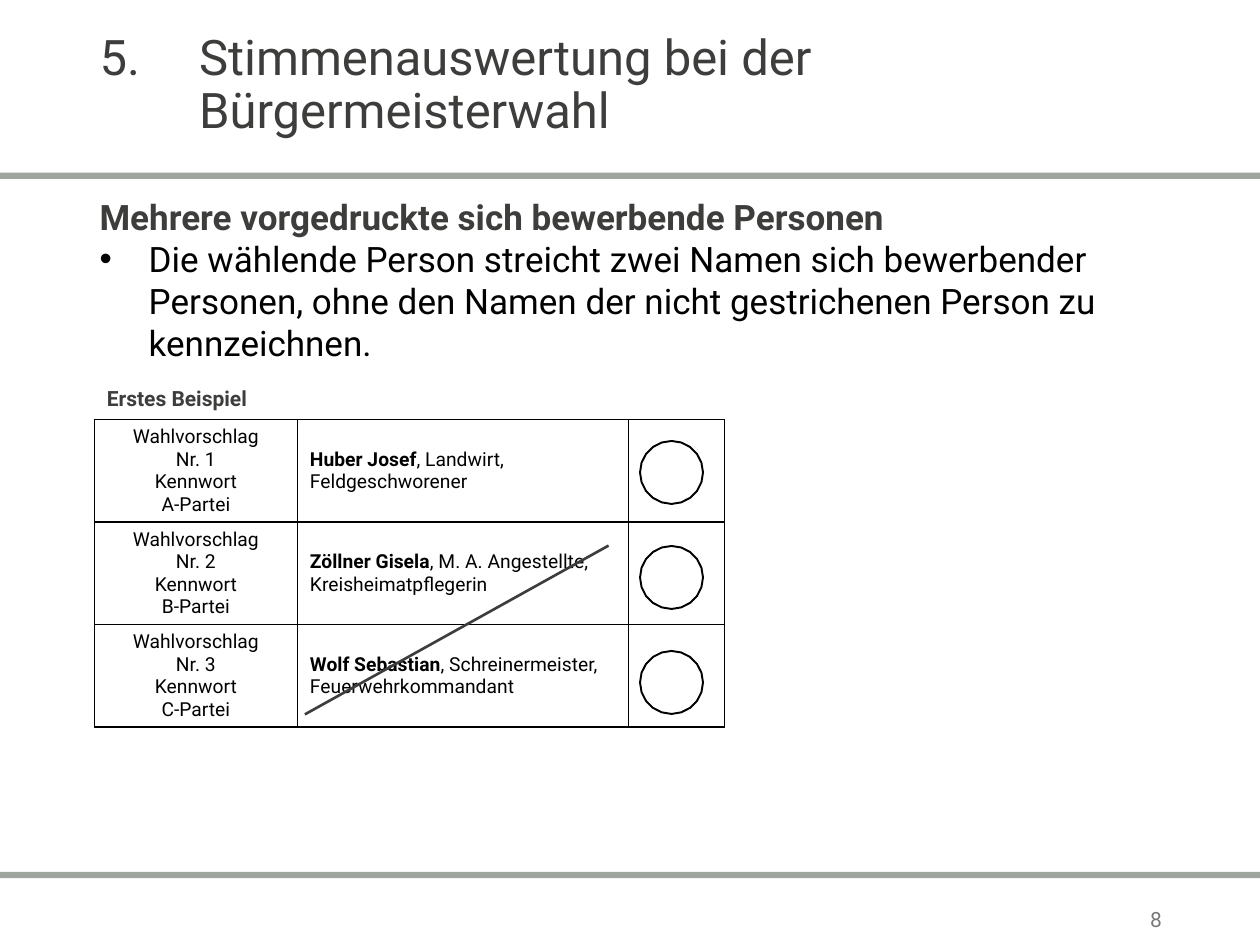
from dataclasses import dataclass
from math import cos, pi, sin

from pptx import Presentation
from pptx.dml.color import RGBColor as Rgb
from pptx.enum.shapes import MSO_CONNECTOR as Link, MSO_SHAPE as Kind
from pptx.enum.text import MSO_ANCHOR as Anchor, MSO_AUTO_SIZE as Fit, PP_ALIGN as Align
from pptx.oxml.ns import qn
from pptx.util import Inches, Pt
from lxml.etree import SubElement as Sub


@dataclass(frozen=True)
class Theme:
    font: str = "Roboto"
    dark: str = "3D3E3C"
    black: str = "000000"
    gray: str = "797979"
    sage: str = "9DA59C"
    head: int = 28
    body: int = 20
    note: int = 12
    cell: int = 11


def write(para, text, *, size, color, font, bold=False, align=Align.LEFT,
          hang=None, bullet=None, lead=None):
    if hang is not None:
        props = para._p.get_or_add_pPr()
        props.set("marL", str(Inches(hang)))
        props.set("indent", str(Inches(-hang)))
        if bullet:
            Sub(props, qn("a:buFont"), typeface="Arial")
            Sub(props, qn("a:buChar"), char=bullet)
        else:
            Sub(props, qn("a:buNone"))
    para.alignment = align
    para.space_before = Pt(0)
    if lead:
        para.line_spacing = lead
    run = para.add_run()
    run.text = text
    run.font.name = font
    run.font.size = Pt(size)
    run.font.bold = bold
    run.font.color.rgb = Rgb.from_string(color)


class Page:
    def __init__(self, slide, theme):
        self.slide, self.theme = slide, theme

    def style(self, size, color, **more):
        return dict(size=size, color=color, font=self.theme.font, **more)

    def place(self, shape, box, anchor):
        shape.left, shape.top, shape.width, shape.height = map(Inches, box)
        frame = shape.text_frame
        frame.word_wrap = True
        frame.auto_size = Fit.NONE
        frame.vertical_anchor = anchor
        return frame

    def title(self, text, box):
        frame = self.place(self.slide.shapes.title, box, Anchor.MIDDLE)
        write(frame.paragraphs[0], text,
              **self.style(self.theme.head, self.theme.dark, hang=0.79, lead=0.9))

    def body(self, head, items, box):
        frame = self.place(self.slide.placeholders[1], box, Anchor.TOP)
        size = self.theme.body
        write(frame.paragraphs[0], head,
              **self.style(size, self.theme.dark, bold=True, hang=0))
        for item in items:
            write(frame.add_paragraph(), item,
                  **self.style(size, self.theme.black, hang=0.39, bullet="•"))

    def label(self, text, box, color, anchor=Anchor.TOP, **more):
        shape = self.slide.shapes.add_textbox(*map(Inches, box))
        frame = self.place(shape, box, anchor)
        write(frame.paragraphs[0], text, **self.style(self.theme.note, color, **more))

    def bar(self, top):
        shape = self.slide.shapes.add_shape(
            Kind.RECTANGLE, 0, Inches(top), Inches(10), Inches(0.05))
        shape.shadow.inherit = False
        shape.fill.solid()
        shape.fill.fore_color.rgb = Rgb.from_string(self.theme.sage)
        shape.line.fill.background()

    def ring(self, x, y, radius, sides=20):
        dots = [(Inches(x - radius * cos(2 * pi * i / sides)),
                 Inches(y - radius * sin(2 * pi * i / sides))) for i in range(sides)]
        pen = self.slide.shapes.build_freeform(*dots[0])
        pen.add_line_segments(dots[1:], close=True)
        shape = pen.convert_to_shape()
        shape.shadow.inherit = False
        shape.fill.background()
        shape.line.color.rgb = Rgb.from_string(self.theme.black)
        shape.line.width = Pt(1.1)

    def strike(self, start, end):
        line = self.slide.shapes.add_connector(
            Link.STRAIGHT, *map(Inches, (*start, *end)))
        Sub(line._element.spPr, qn("a:effectLst"))
        line.line.color.rgb = Rgb.from_string(self.theme.dark)
        line.line.width = Pt(1.5)

    def edge(self, cell):
        props = cell._tc.get_or_add_tcPr()
        for side in ("lnL", "lnR", "lnT", "lnB"):
            line = Sub(props, qn(f"a:{side}"), w=str(Pt(1)))
            Sub(Sub(line, qn("a:solidFill")), qn("a:srgbClr"), val=self.theme.black)

    def ballot(self, rows, left, top, widths, height):
        table = self.slide.shapes.add_table(
            len(rows), len(widths), Inches(left), Inches(top),
            Inches(sum(widths)), Inches(height * len(rows))).table
        table.first_row = table.horz_banding = False
        for col, width in zip(table.columns, widths):
            col.width = Inches(width)
        look = self.style(self.theme.cell, self.theme.black)
        for i, (party, name, job) in enumerate(rows):
            table.rows[i].height = Inches(height)
            for cell in table.rows[i].cells:
                self.edge(cell)
                cell.fill.background()
                cell.vertical_anchor = Anchor.MIDDLE
            frame = table.cell(i, 0).text_frame
            for j, text in enumerate(("Wahlvorschlag", f"Nr. {i + 1}", "Kennwort", party)):
                para = frame.add_paragraph() if j else frame.paragraphs[0]
                write(para, text, align=Align.CENTER, **look)
            para = table.cell(i, 1).text_frame.paragraphs[0]
            write(para, name, bold=True, **look)
            write(para, f", {job}", **look)


def main():
    deck = Presentation()
    deck.slide_width, deck.slide_height = Inches(10), Inches(7.5)
    theme = Theme()
    page = Page(deck.slides.add_slide(deck.slide_layouts[1]), theme)

    for top in (6.92, 1.37):
        page.bar(top)
    page.title("5.\tStimmenauswertung bei der Bürgermeisterwahl", (0.69, 0.08, 7.48, 1.2))
    page.label("8", (8.42, 7.17, 0.9, 0.25), theme.gray, Anchor.MIDDLE, align=Align.RIGHT)
    page.body(
        "Mehrere vorgedruckte sich bewerbende Personen",
        ["Die wählende Person streicht zwei Namen sich bewerbender Personen, "
         "ohne den Namen der nicht gestrichenen Person zu kennzeichnen."],
        (0.69, 1.5, 8.63, 1.5))

    rows = [
        ("A-Partei", "Huber Josef", "Landwirt, Feldgeschworener"),
        ("B-Partei", "Zöllner Gisela", "M. A. Angestellte, Kreisheimatpflegerin"),
        ("C-Partei", "Wolf Sebastian", "Schreinermeister, Feuerwehrkommandant"),
    ]
    page.ballot(rows, 0.75, 3.33, (1.61, 2.63, 0.76), 0.81)
    for i in range(len(rows)):
        page.ring(5.33, 3.75 + i * 5 / 6, 0.25)
    page.strike((2.42, 5.67), (4.83, 4.33))
    page.label("Erstes Beispiel", (0.75, 3.01, 1.45, 0.3), theme.dark, bold=True)

    deck.save("out.pptx")


if __name__ == "__main__":
    main()
